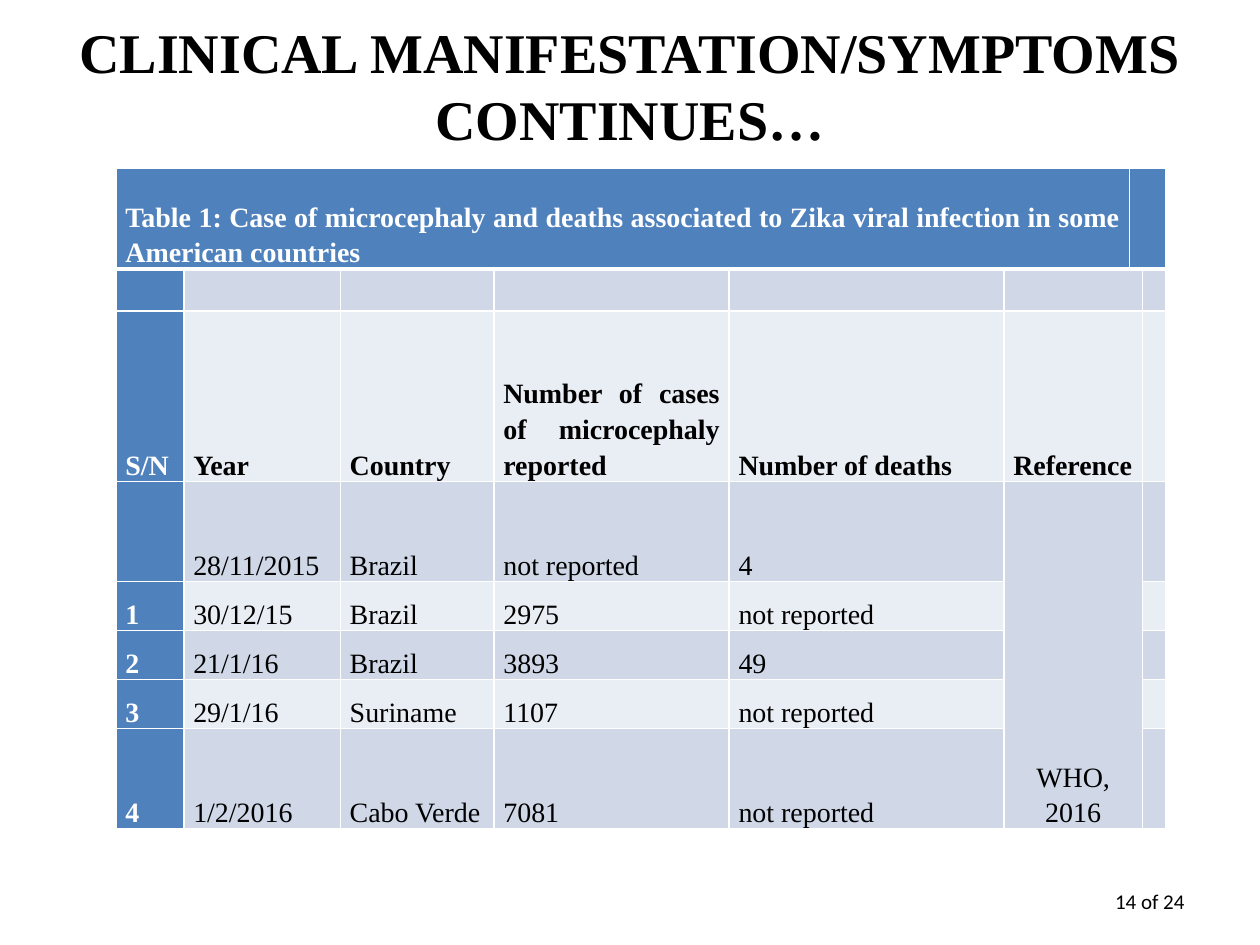
import pptx
import pptx.util
import pptx.dml.color
import pptx.enum.text
import pptx.oxml

Pt = pptx.util.Pt
Align = pptx.enum.text.PP_ALIGN
Anchor = pptx.enum.text.MSO_ANCHOR
SERIF = "Times New Roman"
BLUE, DARK, LIGHT = "4F81BD", "D0D8E8", "E9EDF4"
BLACK, WHITE = "000000", "FFFFFF"
WIDTHS = [38.8, 89.4, 87.8, 134.4, 157, 71.8, 7.4, 13.2]
HEIGHTS = [57.4, 24.2, 97.2, 57.4, 28, 28, 28, 57.4]
CAPTION = ("Table 1: Case of microcephaly and deaths associated to "
           "Zika viral infection in some American countries")
ROWS = [
    [CAPTION],
    [],
    ["S/N", "Year", "Country", "Number of cases of microcephaly reported",
     "Number of deaths", "Reference"],
    ["", "28/11/2015", "Brazil", "not reported", "4", "WHO, 2016"],
    ["1", "30/12/15", "Brazil", "2975", "not reported"],
    ["2", "21/1/16", "Brazil", "3893", "49"],
    ["3", "29/1/16", "Suriname", "1107", "not reported"],
    ["4", "1/2/2016", "Cabo Verde", "7081", "not reported"],
]
SPANS = [(0, 0, 0, 5), (0, 6, 0, 7), (1, 5, 1, 6), (2, 5, 2, 6), (3, 5, 7, 6)]


def color(code):
    return pptx.dml.color.RGBColor.from_string(code)


def add_run(para, text, size, face, ink, bold=False):
    run = para.add_run()
    run.text = text
    run.font.size = Pt(size)
    run.font.name = face
    run.font.bold = bold
    run.font.color.rgb = color(ink)


def add_text(slide, box, text, align, size, face, bold=False):
    frame = slide.shapes.add_textbox(*map(Pt, box)).text_frame
    frame.word_wrap = True
    frame.vertical_anchor = Anchor.MIDDLE
    para = frame.paragraphs[0]
    para.alignment = align
    add_run(para, text, size, face, BLACK, bold)


def add_edges(cell, row):
    props = cell._tc.get_or_add_tcPr()
    wide = {"T": 3 if row == 1 else 1, "B": 3 if row == 0 else 1}
    for spot, side in enumerate("LRTB"):
        width = Pt(wide.get(side, 1))
        props.insert(spot, pptx.oxml.parse_xml(
            f'<a:ln{side} xmlns:a="http://schemas.openxmlformats.org/'
            f'drawingml/2006/main" w="{width}"><a:solidFill>'
            f'<a:srgbClr val="{WHITE}"/></a:solidFill></a:ln{side}>'))


def style_cell(cell, row, col):
    head = row == 0 or col == 0
    cell.fill.solid()
    cell.fill.fore_color.rgb = color(
        BLUE if head else DARK if row % 2 else LIGHT)
    cell.margin_left = cell.margin_right = Pt(5.4)
    cell.margin_top = cell.margin_bottom = 0
    cell.vertical_anchor = Anchor.BOTTOM
    add_edges(cell, row)
    text = ROWS[row][col] if col < len(ROWS[row]) else ""
    if text:
        para = cell.text_frame.paragraphs[0]
        para.alignment = Align.CENTER if (row, col) == (3, 5) else Align.JUSTIFY
        para.line_spacing = 1.15
        add_run(para, text, 16, SERIF, WHITE if head else BLACK,
                head or row == 2)


def add_cases(slide, left, top):
    table = slide.shapes.add_table(
        len(HEIGHTS), len(WIDTHS), Pt(left), Pt(top),
        Pt(sum(WIDTHS)), Pt(sum(HEIGHTS))).table
    for col, width in zip(table.columns, WIDTHS):
        col.width = Pt(width)
    for row, height in zip(table.rows, HEIGHTS):
        row.height = Pt(height)
    for row in range(len(HEIGHTS)):
        for col in range(len(WIDTHS)):
            style_cell(table.cell(row, col), row, col)
    for top_row, first, end_row, last in SPANS:
        table.cell(top_row, first).merge(table.cell(end_row, last))


def main():
    deck = pptx.Presentation()
    deck.slide_width, deck.slide_height = Pt(720), Pt(540)
    slide = deck.slides.add_slide(deck.slide_layouts[6])
    add_text(slide, (36, 12.5, 648, 72),
             "CLINICAL MANIFESTATION/SYMPTOMS CONTINUES…",
             Align.CENTER, 32, SERIF, True)
    add_cases(slide, 66.3, 96.3)
    add_text(slide, (516, 500.5, 168, 28.75), "14 of 24",
             Align.RIGHT, 12, "Calibri")
    deck.save("out.pptx")


if __name__ == "__main__":
    main()
